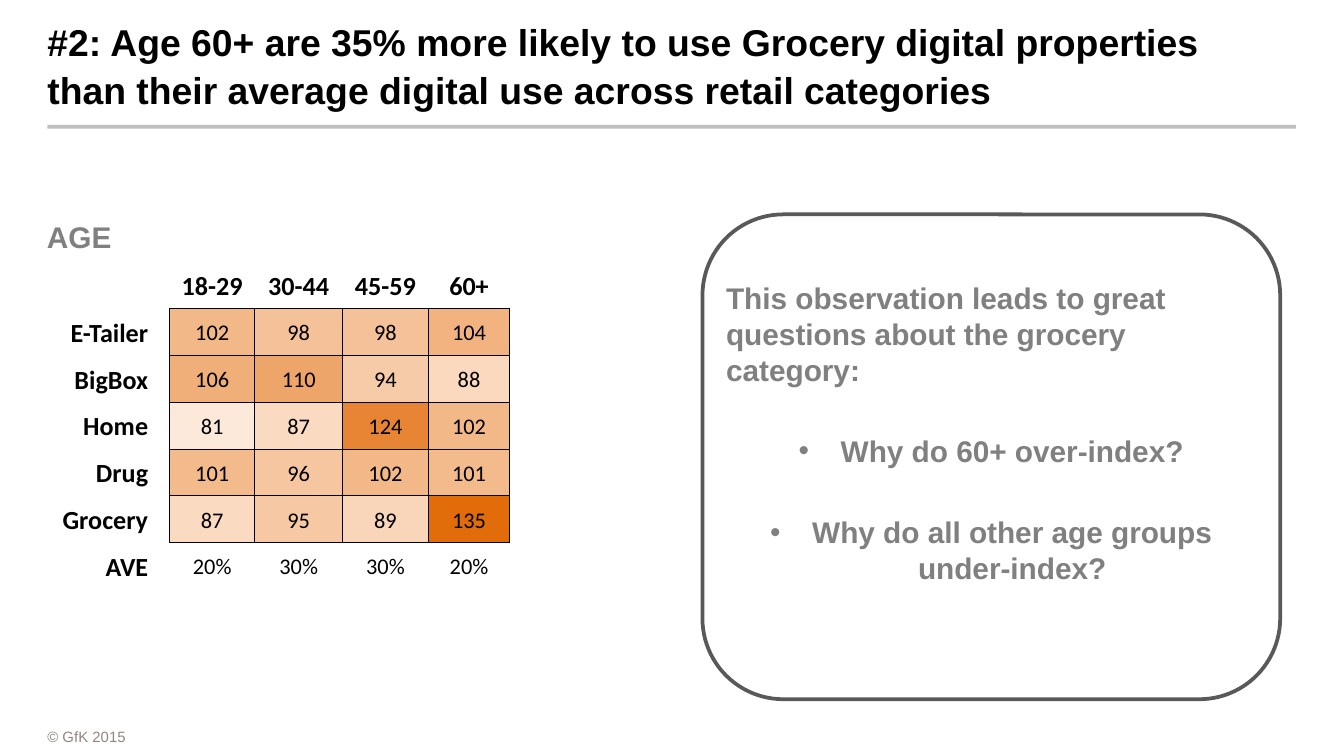
from lxml.etree import SubElement
from pptx import Presentation
from pptx.dml.color import RGBColor
from pptx.enum.shapes import MSO_SHAPE
from pptx.enum.text import MSO_ANCHOR, MSO_AUTO_SIZE, PP_ALIGN
from pptx.oxml.ns import qn
from pptx.util import Pt

COLORS = {
    "black": "000000", "white": "FFFFFF", "rule": "BFBFBF", "gray": "808080",
    "outline": "595959", "footer": "928580", "low": "FDE9D9", "high": "E26B0A",
}
AGES = ["18-29", "30-44", "45-59", "60+"]
INDEXES = {
    "E-Tailer": [102, 98, 98, 104],
    "BigBox": [106, 110, 94, 88],
    "Home": [81, 87, 124, 102],
    "Drug": [101, 96, 102, 101],
    "Grocery": [87, 95, 89, 135],
}
AVERAGES = ["20%", "30%", "30%", "20%"]
COLUMN_WIDTHS = [80.9, 45.7, 47.1, 45.9, 43.8]
SIDES = {"L": "a:lnL", "R": "a:lnR", "T": "a:lnT", "B": "a:lnB"}


def rgb(name):
    return RGBColor.from_string(COLORS[name])


def add_run(p, text, size, color, bold=False, font="Arial"):
    r = p.add_run()
    r.text = text
    r.font.name = font
    r.font.size = Pt(size)
    r.font.bold = bold
    r.font.color.rgb = rgb(color)


def set_frame(tf, anchor, wrap=True):
    tf.margin_left = tf.margin_right = tf.margin_top = tf.margin_bottom = 0
    tf.vertical_anchor = anchor
    tf.auto_size = MSO_AUTO_SIZE.NONE
    tf.word_wrap = wrap


def add_box(s, kind, box, fill):
    sp = s.shapes.add_shape(kind, *map(Pt, box))
    sp.shadow.inherit = False
    sp.fill.solid()
    sp.fill.fore_color.rgb = rgb(fill)
    sp.line.fill.background()
    return sp


def add_heading(s, box, text):
    left, top, width, height = box
    title = s.shapes.title
    title.left, title.top, title.width, title.height = map(Pt, box)
    set_frame(title.text_frame, MSO_ANCHOR.BOTTOM)
    p = title.text_frame.paragraphs[0]
    p.alignment = PP_ALIGN.LEFT
    p.line_spacing = 1.06
    add_run(p, text, 20, "black", True)
    add_box(s, MSO_SHAPE.RECTANGLE, (left, top + height + 7.2, 669.6, 2), "rule")


def heat(value):
    values = [v for row in INDEXES.values() for v in row]
    t = (value - min(values)) / (max(values) - min(values))
    return RGBColor(*(round(a + (b - a) * t) for a, b in zip(rgb("low"), rgb("high"))))


def set_borders(cell, drawn):
    tc_pr = cell._tc.get_or_add_tcPr()
    for side, tag in SIDES.items():
        ln = SubElement(tc_pr, qn(tag), w=str(Pt(0.5)))
        if side in drawn:
            fill = SubElement(ln, qn("a:solidFill"))
            SubElement(fill, qn("a:srgbClr"), val=COLORS["black"])
        else:
            SubElement(ln, qn("a:noFill"))


def fill_cell(cell, text, bold, borders, color=None, label=False):
    cell.margin_left = cell.margin_top = Pt(1.4)
    cell.margin_right = Pt(11.5 if label else 1.4)
    cell.margin_bottom = 0
    cell.vertical_anchor = MSO_ANCHOR.MIDDLE
    set_borders(cell, borders)
    if color is None:
        cell.fill.background()
    else:
        cell.fill.solid()
        cell.fill.fore_color.rgb = color
    if text:
        p = cell.text_frame.paragraphs[0]
        p.alignment = PP_ALIGN.RIGHT if label else PP_ALIGN.CENTER
        add_run(p, text, 14 if bold else 12, "black", bold, "Calibri")


def add_age_table(s, box):
    left, top, width, height = box
    caption = s.shapes.add_textbox(Pt(left + 15.1), Pt(top - 22.9), Pt(135), Pt(19.4))
    set_frame(caption.text_frame, MSO_ANCHOR.TOP, False)
    add_run(caption.text_frame.paragraphs[0], "AGE", 16, "gray", True)

    rows = len(INDEXES) + 2
    table = s.shapes.add_table(rows, len(COLUMN_WIDTHS), *map(Pt, box)).table
    table.first_row = table.horz_banding = False
    for column, column_width in zip(table.columns, COLUMN_WIDTHS):
        column.width = Pt(column_width)
    for row in table.rows:
        row.height = Pt(height / rows)

    fill_cell(table.cell(0, 0), "", True, "")
    fill_cell(table.cell(rows - 1, 0), "AVE", True, "", label=True)
    for j, (age, average) in enumerate(zip(AGES, AVERAGES), 1):
        fill_cell(table.cell(0, j), age, True, "B")
        fill_cell(table.cell(rows - 1, j), average, False, "T")
    for i, (category, values) in enumerate(INDEXES.items(), 1):
        fill_cell(table.cell(i, 0), category, True, "R", label=True)
        for j, value in enumerate(values, 1):
            fill_cell(table.cell(i, j), str(value), False, "LRTB", heat(value))


def add_questions(s, box, lead, questions):
    sp = add_box(s, MSO_SHAPE.ROUNDED_RECTANGLE, box, "white")
    sp.line.color.rgb = rgb("outline")
    sp.line.width = Pt(2)
    tf = sp.text_frame
    set_frame(tf, MSO_ANCHOR.TOP)
    tf.margin_top = Pt(22.4)
    p = tf.paragraphs[0]
    p.alignment = PP_ALIGN.LEFT
    add_run(p, lead, 16, "gray", True)
    for question in questions:
        p = tf.add_paragraph()
        p.alignment = PP_ALIGN.CENTER
        p.space_before = Pt(24.4)
        p_pr = p._p.get_or_add_pPr()
        p_pr.set("marL", str(Pt(22.5)))
        p_pr.set("indent", str(-Pt(22.5)))
        SubElement(p_pr, qn("a:buFont"), typeface="Arial")
        SubElement(p_pr, qn("a:buChar"), char="•")
        add_run(p, question, 16, "gray", True)


def add_footer(s, box, text):
    sp = add_box(s, MSO_SHAPE.RECTANGLE, box, "white")
    set_frame(sp.text_frame, MSO_ANCHOR.MIDDLE)
    p = sp.text_frame.paragraphs[0]
    p.alignment = PP_ALIGN.LEFT
    add_run(p, text, 8, "footer")


def main():
    prs = Presentation()
    prs.slide_width, prs.slide_height = Pt(720.7), Pt(405.4)
    s = prs.slides.add_slide(prs.slide_layouts[5])
    add_footer(s, (25.4, 389.5, 555.8, 11.5), "© GfK 2015")
    add_heading(s, (25.4, 14.4, 618.5, 45.4),
                "#2: Age 60+ are 35% more likely to use Grocery digital properties "
                "than their average digital use across retail categories")
    add_age_table(s, (10.1, 140.4, sum(COLUMN_WIDTHS), 175.7))
    add_questions(s, (376.7, 115, 309.8, 260),
                  "This observation leads to great questions about the grocery category:",
                  ["Why do 60+ over-index?", "Why do all other age groups under-index?"])
    prs.save("out.pptx")


if __name__ == "__main__":
    main()
